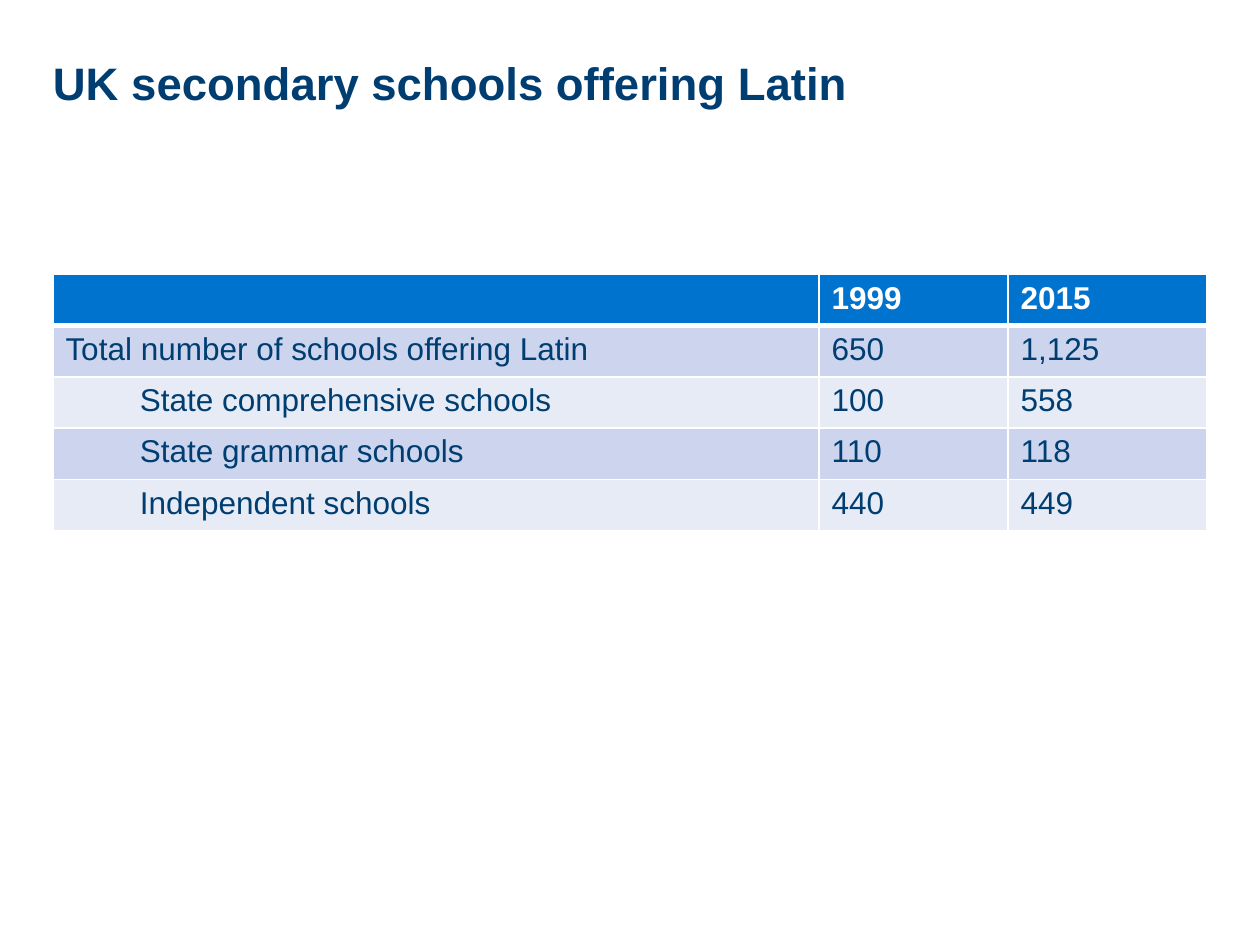
from lxml import etree
from pptx import Presentation
from pptx import util as u
from pptx.dml.color import RGBColor
from pptx.enum import text
from pptx.oxml import ns

COLOURS = {
    "navy": "003E72",
    "blue": "0073CF",
    "band": "CCD5ED",
    "pale": "E7EBF6",
    "white": "FFFFFF",
}
TITLE_FORMAT = {"name": "Arial", "size": u.Pt(26), "bold": True}
HEADER_FORMAT = {"name": "Arial", "size": u.Pt(18), "bold": True}
BODY_FORMAT = {**HEADER_FORMAT, "bold": False}
FRAME_FORMAT = {
    "word_wrap": True,
    "vertical_anchor": text.MSO_ANCHOR.TOP,
    "margin_left": 0,
    "margin_top": 0,
    "margin_right": 0,
    "margin_bottom": 0,
}
COLUMN_WIDTHS = (6.08, 1.5, 1.58)
ROWS = (
    ("", "1999", "2015"),
    ("Total number of schools offering Latin", "650", "1,125"),
    ("\tState comprehensive schools", "100", "558"),
    ("\tState grammar schools", "110", "118"),
    ("\tIndependent schools", "440", "449"),
)


def set_attributes(target, values):
    """Set each named attribute on the target."""
    for name, value in values.items():
        setattr(target, name, value)


def colour(name):
    """Return the named colour as an RGBColor."""
    return RGBColor.from_string(COLOURS[name])


def write_text(paragraph, words, font_format, colour_name):
    """Write words into a paragraph as one formatted run."""
    run = paragraph.add_run()
    run.text = words
    set_attributes(run.font, font_format)
    run.font.color.rgb = colour(colour_name)


def add_tab_stop(paragraph, position):
    """Give the paragraph a left tab stop."""
    properties = paragraph._p.get_or_add_pPr()
    stops = etree.SubElement(properties, ns.qn("a:tabLst"))
    etree.SubElement(stops, ns.qn("a:tab"), pos=str(position), algn="l")


def add_borders(cell, bottom_width):
    """Draw white borders round a cell, with the given bottom width."""
    properties = cell._tc.get_or_add_tcPr()
    widths = {"lnL": 1, "lnR": 1, "lnT": 1, "lnB": bottom_width}
    for index, (side, width) in enumerate(widths.items()):
        line = etree.Element(ns.qn(f"a:{side}"), w=str(u.Pt(width)))
        fill = etree.SubElement(line, ns.qn("a:solidFill"))
        etree.SubElement(fill, ns.qn("a:srgbClr"), val=COLOURS["white"])
        properties.insert(index, line)


def add_title(slide, left, top, width, height):
    """Place the slide title in its box."""
    frame = slide.shapes.add_textbox(left, top, width, height).text_frame
    set_attributes(frame, FRAME_FORMAT)
    write_text(frame.paragraphs[0], "UK secondary schools offering Latin", TITLE_FORMAT, "navy")


def fill_cell(cell, words, row_index):
    """Fill, border and write one table cell according to its row."""
    header = row_index == 0
    fill_name = "blue" if header else ("pale", "band")[row_index % 2]
    cell.fill.solid()
    cell.fill.fore_color.rgb = colour(fill_name)
    add_borders(cell, 3 if header else 1)
    paragraph = cell.text_frame.paragraphs[0]
    if words.startswith("\t"):
        add_tab_stop(paragraph, u.Inches(0.59))
    if words:
        font_format = HEADER_FORMAT if header else BODY_FORMAT
        write_text(paragraph, words, font_format, "white" if header else "navy")


def add_schools_table(slide, left, top, width, height):
    """Place the table of school numbers in its box."""
    table = slide.shapes.add_table(
        len(ROWS), len(COLUMN_WIDTHS), left, top, width, height
    ).table
    for column, column_width in zip(table.columns, COLUMN_WIDTHS):
        column.width = u.Inches(column_width)
    for row_index, row in enumerate(ROWS):
        for column_index, words in enumerate(row):
            fill_cell(table.cell(row_index, column_index), words, row_index)


def main():
    """Build the slide and save the presentation."""
    presentation = Presentation()
    presentation.slide_width = u.Inches(10)
    presentation.slide_height = u.Inches(7.5)
    slide = presentation.slides.add_slide(presentation.slide_layouts[6])
    left, width = u.Inches(0.42), u.Inches(9.16)
    add_title(slide, left, u.Inches(0.44), width, u.Inches(0.46))
    add_schools_table(slide, left, u.Inches(2.18), width, u.Inches(2.03))
    presentation.save("out.pptx")


if __name__ == "__main__":
    main()
